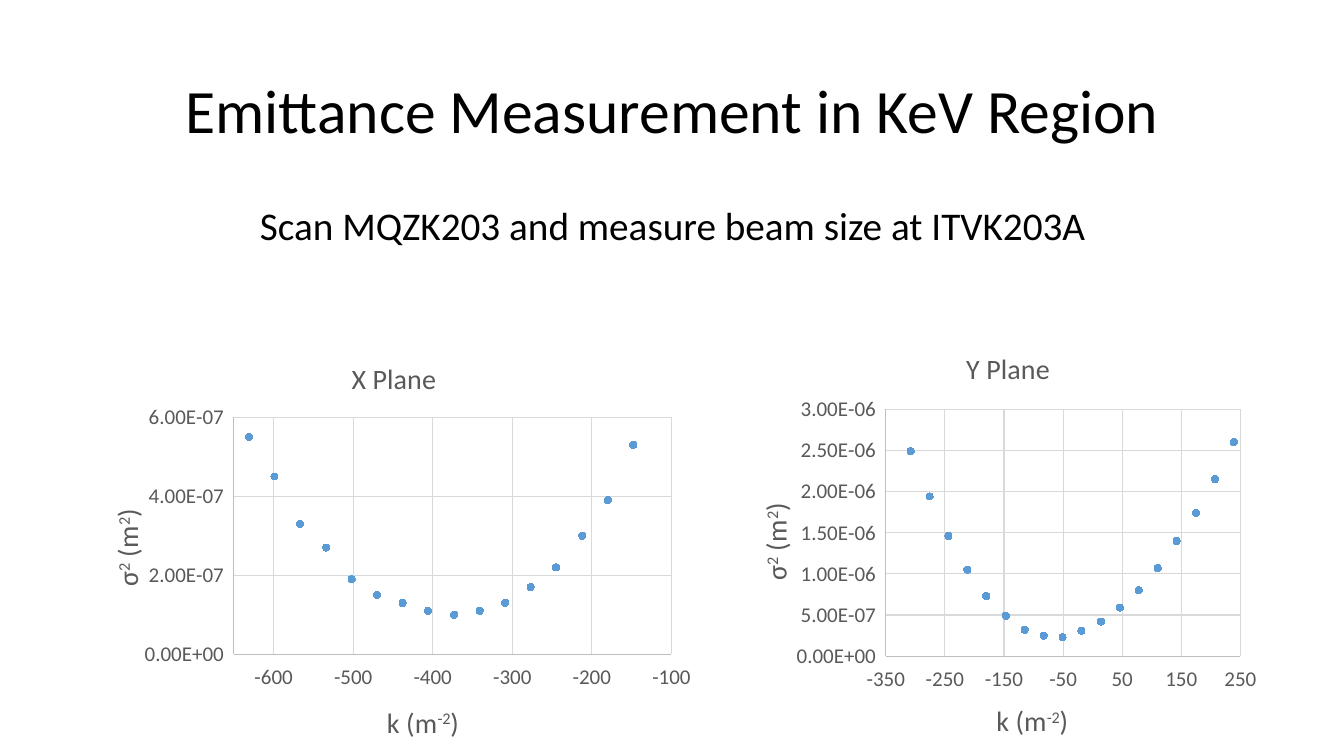
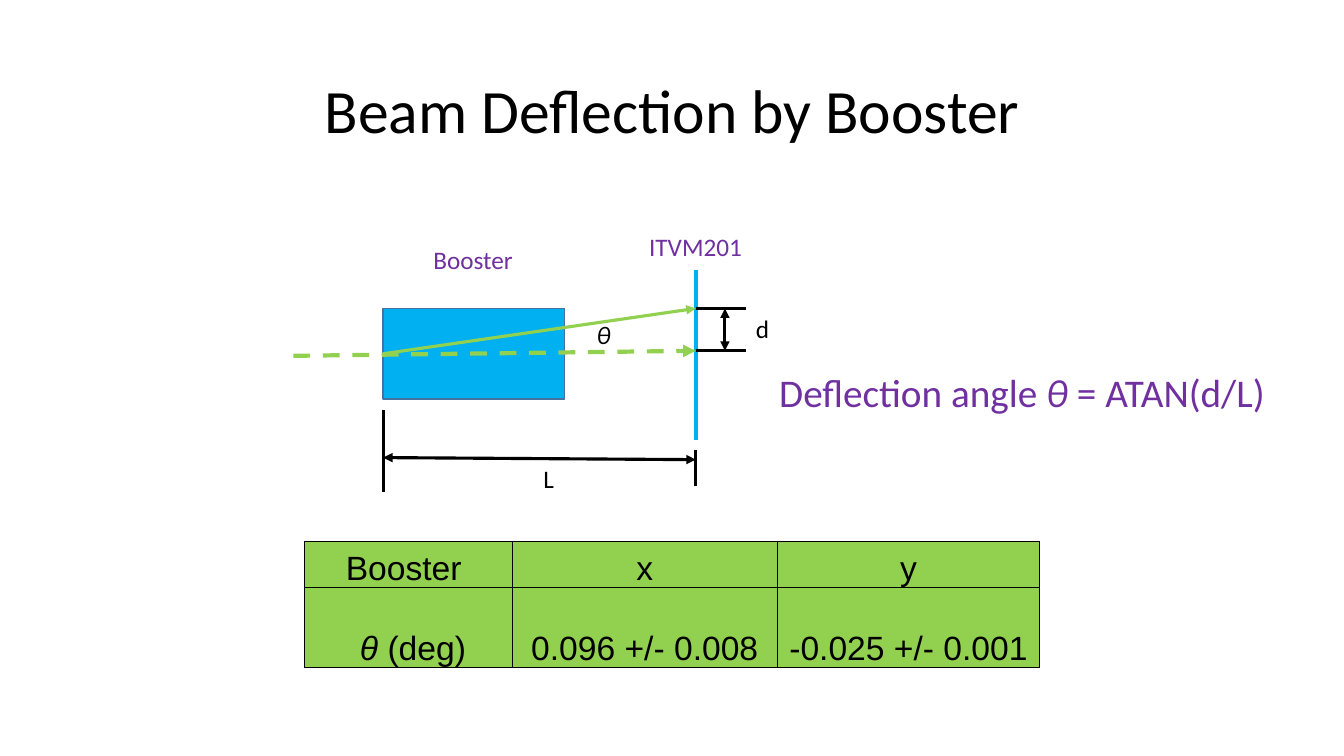
from pptx import Presentation
from pptx.chart.data import XyChartData
from pptx.dml.color import RGBColor
from pptx.enum.chart import XL_AXIS_CROSSES, XL_CHART_TYPE, XL_MARKER_STYLE
from pptx.enum.chart import XL_TICK_LABEL_POSITION, XL_TICK_MARK
from pptx.enum.dml import MSO_LINE
from pptx.enum.shapes import MSO_CONNECTOR, MSO_SHAPE
from pptx.enum.text import MSO_ANCHOR, MSO_AUTO_SIZE, PP_ALIGN
from pptx.oxml import parse_xml
from pptx.oxml.ns import nsdecls, qn
from pptx.util import Inches, Pt

BLACK, PURPLE, GREEN, CYAN = "000000", "7030A0", "92D050", "00B0F0"
GREY, AXIS, GRID, DOT = "595959", "BFBFBF", "D9D9D9", "5B9BD5"
rgb = RGBColor.from_string


def add_text(s, box, text, size, color=BLACK, centred=False):
    """Add one paragraph; every θ in it becomes an italic run."""
    tf = s.shapes.add_textbox(*map(Inches, box)).text_frame
    tf.word_wrap = centred
    p = tf.paragraphs[0]
    if centred:
        p.alignment, p.line_spacing = PP_ALIGN.CENTER, 0.9
    else:
        tf.auto_size = MSO_AUTO_SIZE.SHAPE_TO_FIT_TEXT
    before, theta, after = text.partition("θ")
    for part in filter(None, (before, theta, after)):
        r = p.add_run()
        r.text = part
        r.font.name, r.font.size, r.font.italic = "Calibri", Pt(size), part == "θ"
        r.font.color.rgb = rgb(color)
    return tf


def add_line(s, start, end, color=BLACK, width=2.25, arrows=(), dash=None):
    """Add a straight line; arrows lists headEnd and/or tailEnd."""
    line = s.shapes.add_connector(MSO_CONNECTOR.STRAIGHT, *map(Inches, start + end))
    line.line.color.rgb, line.line.width = rgb(color), Pt(width)
    if dash:
        line.line.dash_style = dash
    ln = line.line._get_or_add_ln()
    for end_name in arrows:
        ln.append(parse_xml(f'<a:{end_name} {nsdecls("a")} type="triangle"/>'))
    line._element.spPr.append(parse_xml(f'<a:effectLst {nsdecls("a")}/>'))
    return line


prs = Presentation()
prs.slide_width, prs.slide_height = Inches(13.33), Inches(7.5)

slides = []
for heading in ("Emittance Measurement in KeV Region", "Beam Deflection by Booster"):
    s = prs.slides.add_slide(prs.slide_layouts[6])
    tf = add_text(s, (0.92, 0.4, 11.5, 1.45), heading, 44, centred=True)
    tf.vertical_anchor = MSO_ANCHOR.MIDDLE
    slides.append(s)
emittance, deflection = slides

# Slide 1: quadrupole scan
tf = add_text(emittance, (0.92, 2, 11.5, 4.76),
              "Scan MQZK203 and measure beam size at ITVK203A", 28, centred=True)
tf.paragraphs[0].space_before = Pt(10)

K_STEP = 32.2
SCANS = [
    dict(title="Y Plane", box=(7.24, 3.2, 5.33, 4.3), plot=(0.29, 0.2, 0.66, 0.57),
         k_range=(-350, 250), top=3e-6, unit=5e-7, first_k=239,
         sizes=[2.6e-6, 2.15e-6, 1.74e-6, 1.4e-6, 1.07e-6, 8e-7, 5.9e-7, 4.2e-7, 3.1e-7,
                2.3e-7, 2.5e-7, 3.2e-7, 4.9e-7, 7.3e-7, 1.05e-6, 1.46e-6, 1.94e-6, 2.49e-6]),
    dict(title="X Plane", box=(0.77, 3.3, 6.2, 4.2), plot=(0.25, 0.2, 0.7, 0.56),
         k_range=(-650, -100), top=6e-7, unit=2e-7, first_k=-148,
         sizes=[5.3e-7, 3.9e-7, 3e-7, 2.2e-7, 1.7e-7, 1.3e-7, 1.1e-7, 1e-7,
                1.1e-7, 1.3e-7, 1.5e-7, 1.9e-7, 2.7e-7, 3.3e-7, 4.5e-7, 5.5e-7]),
]
for scan in SCANS:
    data = XyChartData()
    series = data.add_series("Series 1")
    for i, size in enumerate(scan["sizes"]):
        series.add_data_point(round(scan["first_k"] - K_STEP * i), size)
    chart = emittance.shapes.add_chart(
        XL_CHART_TYPE.XY_SCATTER, *map(Inches, scan["box"]), data).chart
    chart.has_legend = False
    chart.font.name, chart.font.size = "Calibri", Pt(10)
    chart.font.color.rgb = rgb(BLACK)
    plot = chart.plots[0]
    plot.vary_by_categories = False
    dots = plot.series[0]
    dots.format.line.fill.background()
    dots.marker.style, dots.marker.size = XL_MARKER_STYLE.CIRCLE, 5
    dots.marker.format.fill.solid()
    dots.marker.format.fill.fore_color.rgb = rgb(DOT)
    dots.marker.format.line.color.rgb = rgb(DOT)

    k_axis, size_axis = chart.category_axis, chart.value_axis
    k_axis.crosses = XL_AXIS_CROSSES.MINIMUM
    for axis, (low, high), unit, fmt in (
            (k_axis, scan["k_range"], 100, "General"),
            (size_axis, (0, scan["top"]), scan["unit"], "0.00E+00")):
        axis.minimum_scale, axis.maximum_scale, axis.major_unit = low, high, unit
        axis.major_tick_mark = axis.minor_tick_mark = XL_TICK_MARK.NONE
        axis.has_major_gridlines = True
        for line, color in ((axis.format.line, AXIS),
                            (axis.major_gridlines.format.line, GRID)):
            line.color.rgb, line.width = rgb(color), Pt(0.75)
        labels = axis.tick_labels
        labels.number_format, labels.number_format_is_linked = fmt, False
        labels.font.name, labels.font.size = "Calibri", Pt(15)
        labels.font.color.rgb = rgb(GREY)
        axis.tick_label_position = XL_TICK_LABEL_POSITION.LOW

    # Odd pieces are superscripts
    layouts = [(chart._chartSpace.chart.plotArea, 0, scan["plot"])]
    for title, pieces, place in (
            (chart.chart_title, [scan["title"]], (0.43, 0.05)),
            (k_axis.axis_title, ["k (m", "-2", ")"], (0.49, 0.87)),
            (size_axis.axis_title, ["σ", "2", " (m", "2", ")"], (0.045, 0.41))):
        p = title.text_frame.paragraphs[0]
        for i, piece in enumerate(pieces):
            r = p.add_run()
            r.text = piece
            r.font.name, r.font.size, r.font.bold = "Calibri", Pt(20), False
            r.font.color.rgb = rgb(GREY)
            if i % 2:
                r._r.get_or_add_rPr().set("baseline", "30000")
        layouts.append((title._element, 1, place))
    body = size_axis.axis_title.text_frame._txBody.find(qn("a:bodyPr"))
    body.set("rot", "-5400000")
    body.set("vert", "horz")

    for parent, index, place in layouts:
        for old in parent.findall(qn("c:layout")):
            parent.remove(old)
        target = '<c:layoutTarget val="inner"/>' if len(place) == 4 else ""
        modes = "".join(f'<c:{n}Mode val="edge"/>' for n in "xy")
        sizes = "".join(f'<c:{n} val="{v}"/>' for n, v in zip("xywh", place))
        parent.insert(index, parse_xml(
            f'<c:layout {nsdecls("c")}><c:manualLayout>{target}{modes}{sizes}'
            '</c:manualLayout></c:layout>'))

# Slide 2: deflection geometry
s = deflection
LEFT, SCREEN, HIT, STRAIGHT = 3.8, 6.9, 3.06, 3.48
booster = s.shapes.add_shape(MSO_SHAPE.RECTANGLE, *map(Inches, (LEFT, HIT, 1.8, 0.9)))
booster.shadow.inherit = False
booster.fill.solid()
booster.fill.fore_color.rgb = rgb(CYAN)
booster.line.color.rgb, booster.line.width = rgb("43739E"), Pt(1)

BOTH = ("headEnd", "tailEnd")
add_line(s, (SCREEN, 2.68), (SCREEN, 4.37), CYAN, 3)
add_line(s, (2.91, 3.53), (SCREEN, STRAIGHT), GREEN, 3, BOTH[1:], MSO_LINE.DASH)
beam = add_line(s, (LEFT, 3.51), (SCREEN, HIT), GREEN, arrows=BOTH[1:])
beam.begin_connect(booster, 1)
add_line(s, (LEFT, 4.07), (LEFT, 4.88))
add_line(s, (SCREEN, 4.46), (SCREEN, 4.82))
add_line(s, (LEFT, 4.54), (SCREEN, 4.56), arrows=BOTH)
for y in (HIT, STRAIGHT):
    add_line(s, (SCREEN, y), (7.4, y))
add_line(s, (7.19, HIT), (7.19, STRAIGHT), arrows=BOTH)

for box, text, size, color in (
        ((7.4, 3.06, 0.34, 0.4), "d", 18, BLACK),
        ((5.29, 4.55, 0.31, 0.4), "L", 18, BLACK),
        ((7.63, 3.6, 5.08, 0.57), "Deflection angle θ = ATAN(d/L)", 28, PURPLE),
        ((4.2, 2.37, 1, 0.4), "Booster", 18, PURPLE),
        ((6.34, 2.25, 1.13, 0.4), "ITVM201", 18, PURPLE),
        ((5.82, 3.12, 0.34, 0.4), "θ", 18, BLACK)):
    add_text(s, box, text, size, color)

ROWS = [[["Booster "], ["x"], ["y"]],
        [[" ", "θ", " (deg)"], ["0.096 +/- 0.008"], ["-0.025 +/- 0.001"]]]
table = s.shapes.add_table(2, 3, *map(Inches, (3.02, 5.37, 7.29, 1.25))).table
for col, width in zip(table.columns, (2.06, 2.63, 2.6)):
    col.width = Inches(width)
for row, height, texts in zip(table.rows, (0.46, 0.79), ROWS):
    row.height = Inches(height)
    for cell, pieces in zip(row.cells, texts):
        cell.margin_left = cell.margin_right = cell.margin_top = Inches(0.01)
        cell.margin_bottom = 0
        cell.vertical_anchor = MSO_ANCHOR.BOTTOM
        p = cell.text_frame.paragraphs[0]
        p.alignment = PP_ALIGN.CENTER
        for piece in pieces:
            r = p.add_run()
            r.text = piece
            r.font.name, r.font.size = "Arial", Pt(24)
            r.font.bold, r.font.italic = False, piece == "θ"
            r.font.color.rgb = rgb(BLACK)
        tcPr = cell._tc.get_or_add_tcPr()
        for side in "LRTB":
            tcPr.append(parse_xml(
                f'<a:ln{side} {nsdecls("a")} w="{Pt(0.5)}"><a:solidFill>'
                f'<a:srgbClr val="{BLACK}"/></a:solidFill></a:ln{side}>'))
        cell.fill.solid()
        cell.fill.fore_color.rgb = rgb(GREEN)

prs.save("out.pptx")
